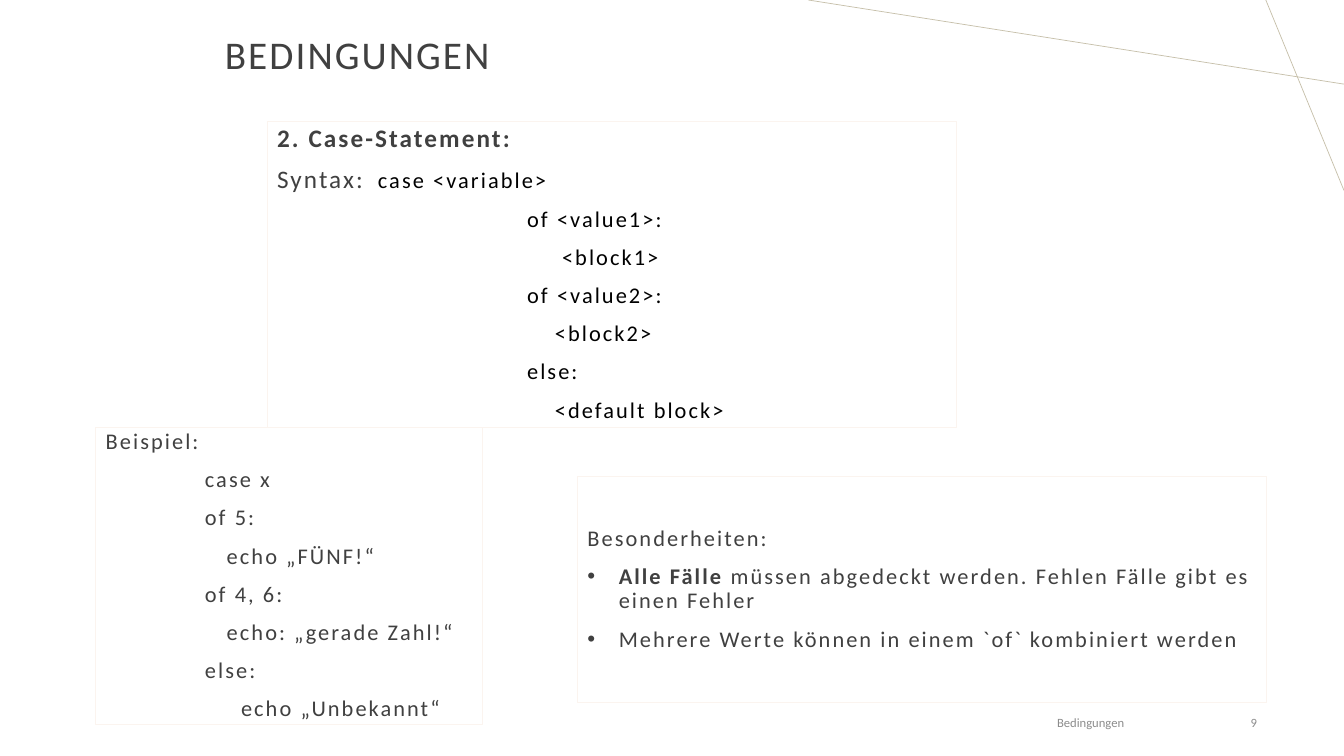
from pptx import Presentation
from pptx.util import Cm, Pt
from pptx.dml.color import RGBColor as RGB
from pptx.enum.shapes import MSO_CONNECTOR as Link
from pptx.enum.text import MSO_ANCHOR as Anchor, MSO_AUTO_SIZE as Auto, PP_ALIGN as Align
from pptx.oxml.ns import qn
from lxml.etree import SubElement as add_sub

DARK = RGB(0x40, 0x40, 0x40)
BLACK = RGB(0, 0, 0)
GREY = RGB(0x8C, 0x8C, 0x8C)
SAND = RGB(0xC6, 0xBF, 0xA9)
CREAM = RGB(0xFB, 0xF4, 0xEF)

deck = Presentation()
deck.slide_width, deck.slide_height = Cm(33.87), Cm(19.05)
slide = deck.slides.add_slide(deck.slide_layouts[4])
title, syntax, notes, sample, spare = slide.placeholders
spare.element.getparent().remove(spare.element)


def place(shape, left, top, width, height):
    shape.left, shape.top = Cm(left), Cm(top)
    shape.width, shape.height = Cm(width), Cm(height)
    frame = shape.text_frame
    frame.word_wrap = True
    frame.auto_size = Auto.NONE
    frame.vertical_anchor = Anchor.MIDDLE
    return frame


def style(para, size, color, gap=0, bold=False):
    font = para.font
    font.name, font.size, font.bold = "Calibri", Pt(size), bold
    font.color.rgb = color
    para._p.pPr.find(qn("a:defRPr")).set("spc", str(gap))


# Corner lines
for x1, y1, x2, y2 in [(33.87, 2.12, 20.37, 0), (31.9, 0, 33.87, 4.8)]:
    line = slide.shapes.add_connector(Link.STRAIGHT, Cm(x1), Cm(y1), Cm(x2), Cm(y2))
    line.line.color.rgb = SAND
    line.line.width = Pt(0.5)
    add_sub(line._element.spPr, qn("a:effectLst"))

# Title
frame = place(title, -2.69, -0.41, 23.39, 3.68)
frame.text = "BEDINGUNGEN"
head = frame.paragraphs[0]
head.alignment = Align.CENTER
head.line_spacing = 0.9
style(head, 28, DARK, 150)

# Framed boxes; each row: indent in cm, size, colour, bullet, runs (text, bold, size, colour)
TAB = 6.35
boxes = [
    (syntax, (6.73, 3.05, 17.37, 7.72), [
        (0, 18, DARK, False, [("2. Case-Statement:", True, 18, DARK)]),
        (0, 18, DARK, False, [("Syntax:\t", False, 18, DARK),
                              ("case <variable>", False, 16, BLACK)]),
    ] + [(left, 16, BLACK, False, [(text, False, 16, BLACK)]) for left, text in [
        (6.3, "of <value1>:"), (7.18, "<block1>"), (6.3, "of <value2>:"),
        (7, "<block2>"), (6.3, "else:"), (7, "<default block>")]]),
    (notes, (14.55, 12.01, 17.37, 5.69), [
        (0, 16, DARK, False, [("Besonderheiten:", False, 16, DARK)]),
        (0.79, 16, DARK, True, [
            ("Alle Fälle ", True, 16, DARK),
            ("müssen abgedeckt werden. Fehlen Fälle gibt es einen Fehler", False, 16, DARK)]),
        (0.79, 16, DARK, True, [
            ("Mehrere Werte können in einem `of` kombiniert werden", False, 16, DARK)]),
    ]),
    (sample, (2.41, 10.77, 9.75, 7.49), [
        (left, 16, DARK, False, [(text, False, 16, DARK)]) for left, text in [
            (0, "Beispiel:"), (2.5, "case x"), (2.5, "of 5:"), (3.05, "echo „FÜNF!“"),
            (2.5, "of 4, 6:"), (3.05, "echo: „gerade Zahl!“"), (2.5, "else:"),
            (3.41, "echo „Unbekannt“")]]),
]
for box, area, rows in boxes:
    frame = place(box, *area)
    box.line.color.rgb = CREAM
    box.line.width = Pt(0.75)
    for num, (left, size, color, dot, runs) in enumerate(rows):
        para = frame.add_paragraph() if num else frame.paragraphs[0]
        para.alignment = Align.LEFT
        para.line_spacing = 0.9
        para.space_before, para.space_after = Pt(10), Pt(0)
        props = para._p.get_or_add_pPr()
        props.set("marL", str(Cm(left)))
        props.set("indent", str(Cm(-left if dot else 0)))
        if dot:
            add_sub(props, qn("a:buFont"), typeface="Arial")
            add_sub(props, qn("a:buChar"), char="•")
        else:
            add_sub(props, qn("a:buNone"))
        if "\t" in runs[0][0]:
            tabs = add_sub(props, qn("a:tabLst"))
            add_sub(tabs, qn("a:tab"), pos=str(Cm(TAB)), algn="l")
        style(para, size, color, 150, runs[0][1])
        for text, bold, pts, tint in runs:
            run = para.add_run()
            run.text = text
            if len(runs) > 1:
                run.font.bold, run.font.size = bold, Pt(pts)
                run.font.color.rgb = tint

# Footer and page number
for text, left, width, side in [("Bedingungen", 21.77, 11.43, Align.CENTER),
                                ("9", 24.31, 7.62, Align.RIGHT)]:
    foot = slide.shapes.add_textbox(0, 0, 0, 0)
    frame = place(foot, left, 17.7, width, 1.02)
    frame.text = text
    frame.paragraphs[0].alignment = side
    style(frame.paragraphs[0], 9, GREY)

deck.save("out.pptx")
